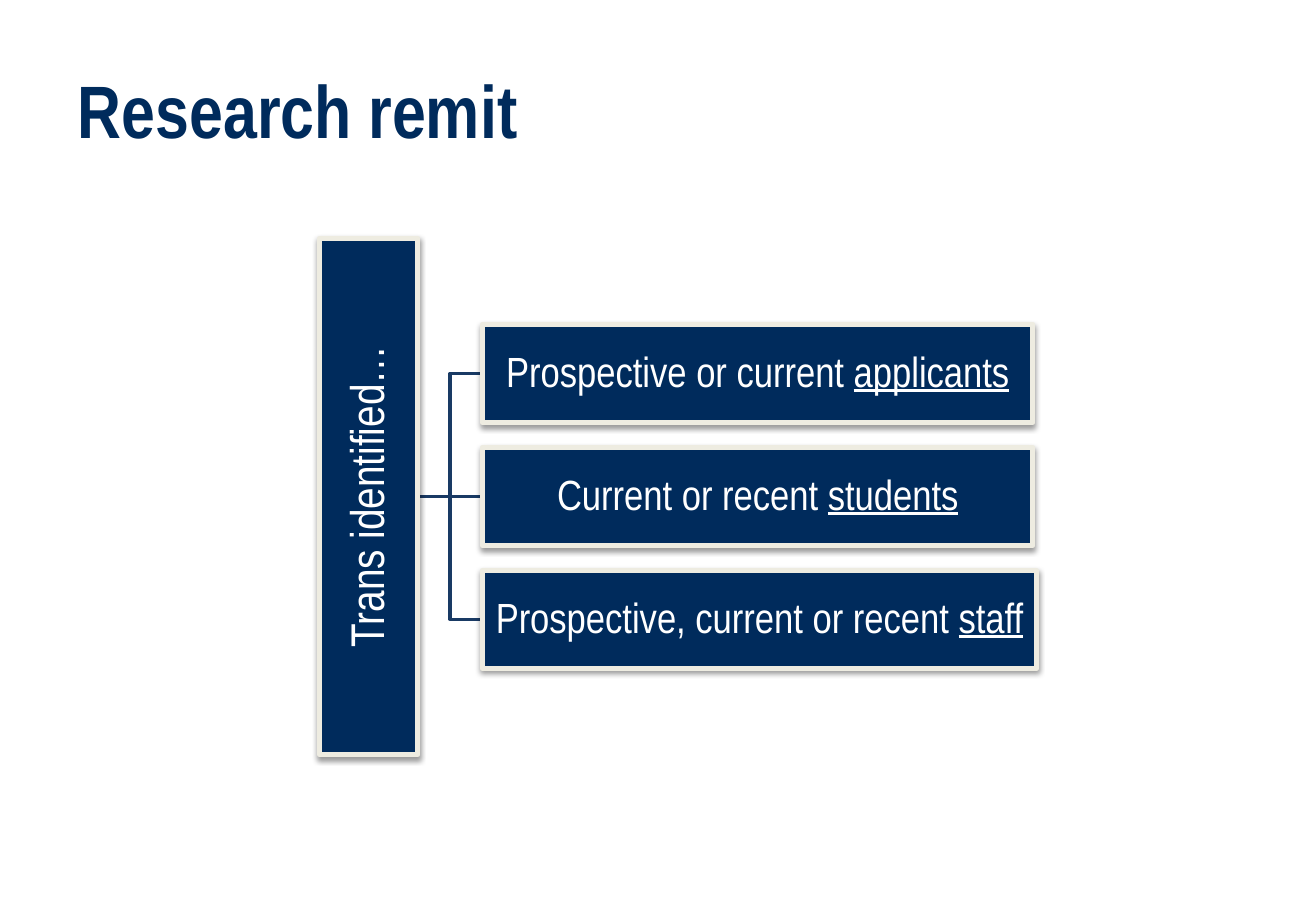
from lxml import etree
from pptx import Presentation
from pptx import util as u
from pptx.dml.color import RGBColor
from pptx.enum import shapes, text
from pptx.oxml import ns

COLOURS = {"navy": "002B5C", "branch": "193A64", "cream": "EEECE1",
           "white": "FFFFFF", "black": "000000"}
FONT = "Arial Narrow"


def colour(name):
    return RGBColor.from_string(COLOURS[name])


def add_effects(parent, tag, **attributes):
    return etree.SubElement(parent, ns.qn(tag), {k: str(v) for k, v in attributes.items()})


def write(para, content, size, ink="white", bold=None, underline=None):
    span = para.add_run()
    span.text = content
    font = span.font
    font.name, font.size, font.bold, font.underline = FONT, u.Pt(size), bold, underline
    font.color.rgb = colour(ink)


class Slide:
    """Draws on one page; every length is a percentage of the page's size."""

    def __init__(self, deck):
        self.wide, self.high = deck.slide_width, deck.slide_height
        self.page = deck.slides.add_slide(deck.slide_layouts[6])

    def place(self, x, y):
        return round(x * self.wide / 100), round(y * self.high / 100)

    def title(self, content, left, top, width, height):
        box = self.page.shapes.add_textbox(*self.place(left, top), *self.place(width, height))
        frame = box.text_frame
        frame.word_wrap = True
        frame.vertical_anchor = text.MSO_ANCHOR.MIDDLE
        write(frame.paragraphs[0], content, 44, ink="navy", bold=True)

    def block(self, left, top, width, height, size, content, key="", upright=False):
        """Framed block with an underlined key word; upright text reads upwards."""
        x, y = self.place(left, top)
        w, h = self.place(width, height)
        if upright:
            x, y, w, h = x + (w - h) // 2, y + (h - w) // 2, h, w
        box = self.page.shapes.add_shape(shapes.MSO_SHAPE.RECTANGLE, x, y, w, h)
        box.rotation = 270 if upright else 0
        box.fill.solid()
        box.fill.fore_color.rgb = colour("navy")
        box.line.color.rgb = colour("cream")
        box.line.width = u.Pt(3)
        self.shade(box)

        frame = box.text_frame
        frame.word_wrap = True
        frame.vertical_anchor = text.MSO_ANCHOR.MIDDLE
        frame.margin_left = frame.margin_right = u.Inches(0.02)
        frame.margin_top = frame.margin_bottom = u.Inches(0.02)
        para = frame.paragraphs[0]
        para.alignment = text.PP_ALIGN.CENTER
        para.line_spacing = 0.9
        write(para, content, size)
        if key:
            write(para, key, size, underline=True)

    def shade(self, box):
        box.shadow.inherit = False
        effects = box._element.spPr.find(ns.qn("a:effectLst"))
        shadow = add_effects(effects, "a:outerShdw", blurRad=u.Pt(3.1), dist=u.Pt(1.6),
                             dir=90 * 60000, rotWithShape=0)
        tint = add_effects(shadow, "a:srgbClr", val=COLOURS["black"])
        add_effects(tint, "a:alpha", val=38000)

    def branch(self, start, end):
        kinds = shapes.MSO_CONNECTOR
        kind = kinds.STRAIGHT if start[1] == end[1] else kinds.ELBOW
        line = self.page.shapes.add_connector(kind, *self.place(*start), *self.place(*end))
        line.line.color.rgb = colour("branch")
        line.line.width = u.Pt(2)
        add_effects(line._element.spPr, "a:effectLst")


def main():
    deck = Presentation()
    deck.slide_width, deck.slide_height = u.Inches(10.83), u.Inches(7.5)
    slide = Slide(deck)
    slide.title("Research remit", 5, 3.6, 74.8, 16.7)

    groups = [("Prospective or current ", "applicants", 41.83),
              ("Current or recent ", "students", 41.83),
              ("Prospective, current or recent ", "staff", 42.11)]
    middle, step, thick = 54.5, 13.5, 10.8
    root_left, root_width, root_height = 24.28, 7.48, 56.67
    root_right, group_left = root_left + root_width, 36.66
    centres = [middle + (row - 1) * step for row in range(len(groups))]

    for centre in centres:
        slide.branch((root_right, middle), (group_left, centre))
    slide.block(root_left, middle - root_height / 2, root_width, root_height,
                28, "Trans identified…", upright=True)
    for centre, (content, key, width) in zip(centres, groups):
        slide.block(group_left, centre - thick / 2, width, thick, 25, content, key)
    deck.save("out.pptx")


if __name__ == "__main__":
    main()
